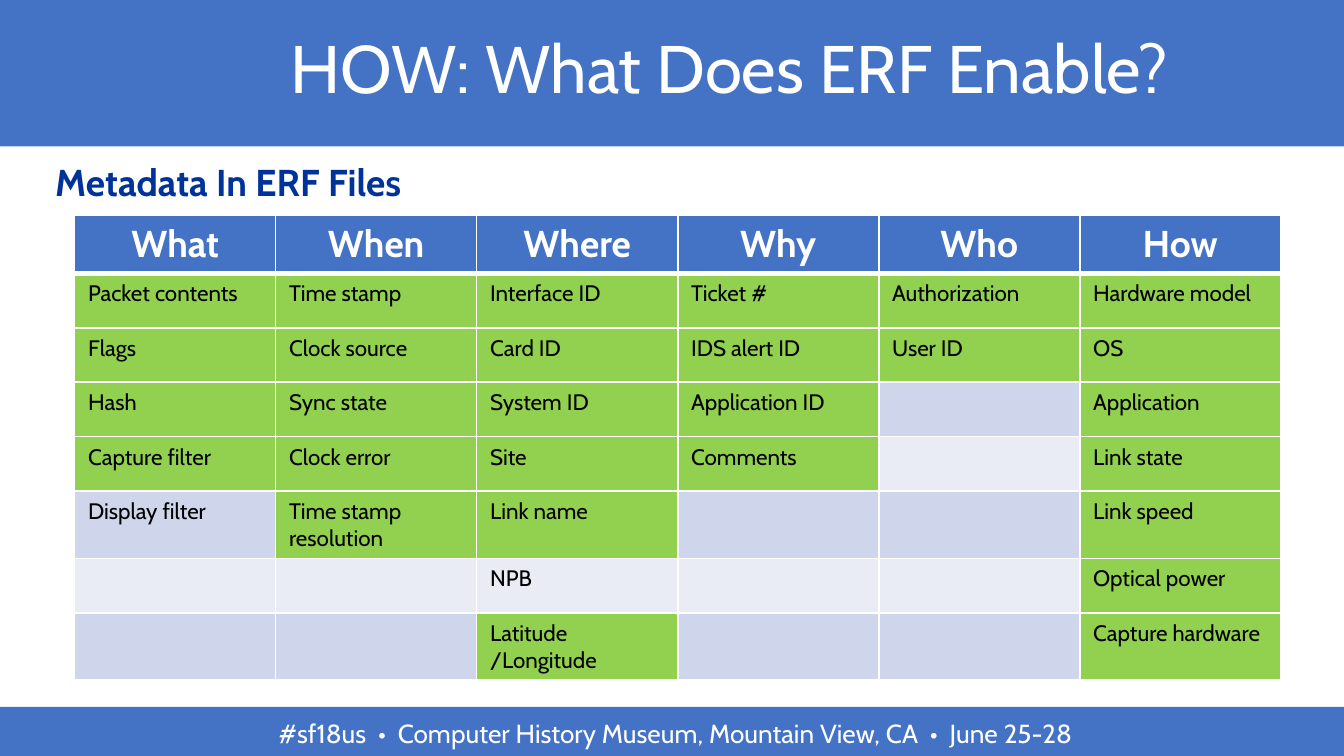
from dataclasses import dataclass

from lxml import etree
from pptx import Presentation
from pptx.dml.color import RGBColor
from pptx.enum.shapes import MSO_SHAPE
from pptx.enum.text import MSO_ANCHOR, PP_ALIGN
from pptx.oxml.ns import qn
from pptx.util import Pt

RECT = MSO_SHAPE.RECTANGLE
LEFT, CENTER = PP_ALIGN.LEFT, PP_ALIGN.CENTER
TOP, MIDDLE = MSO_ANCHOR.TOP, MSO_ANCHOR.MIDDLE


@dataclass(frozen=True)
class Theme:
    font: str = "Cabin"
    blue: str = "4472C4"
    navy: str = "003399"
    green: str = "92D050"
    band_dark: str = "CFD5EA"
    band_light: str = "E9EBF5"
    white: str = "FFFFFF"
    black: str = "000000"
    title: int = 36
    heading: int = 20
    footer: int = 14
    body: int = 12


T = Theme()

HEADERS = ["What", "When", "Where", "Why", "Who", "How"]
COLUMNS = [
    ["Packet contents", "Flags", "Hash", "Capture filter", "Display filter"],
    ["Time stamp", "Clock source", "Sync state", "Clock error",
     "Time stamp resolution"],
    ["Interface ID", "Card ID", "System ID", "Site", "Link name", "NPB",
     "Latitude /Longitude"],
    ["Ticket #", "IDS alert ID", "Application ID", "Comments"],
    ["Authorization", "User ID"],
    ["Hardware model", "OS", "Application", "Link state", "Link speed",
     "Optical power", "Capture hardware"],
]
NOT_ENABLED = {"", "Display filter", "NPB"}  # these keep the band colour
BODY_ROWS = max(len(column) for column in COLUMNS)


def write(tf, text, size, color, bold=False, align=LEFT):
    p = tf.paragraphs[0]
    p.alignment = align
    r = p.add_run()
    r.text = text
    r.font.name = T.font
    r.font.size = Pt(size)
    r.font.bold = bold
    r.font.color.rgb = RGBColor.from_string(color)
    return p


def add_band(s, x, y, w, h):
    sp = s.shapes.add_shape(RECT, Pt(x), Pt(y), Pt(w), Pt(h))
    sp.shadow.inherit = False
    sp.fill.solid()
    sp.fill.fore_color.rgb = RGBColor.from_string(T.blue)
    sp.line.fill.background()


def add_text(s, x, y, w, h, *args, **kwargs):
    sp = s.shapes.add_textbox(Pt(x), Pt(y), Pt(w), Pt(h))
    sp.text_frame.word_wrap = True
    write(sp.text_frame, *args, **kwargs)


def place_title(s, x, y, w, h):
    sp = s.shapes.title
    sp.left, sp.top, sp.width, sp.height = Pt(x), Pt(y), Pt(w), Pt(h)
    tf = sp.text_frame
    tf.word_wrap = True
    tf.vertical_anchor = MIDDLE
    tf.margin_left = tf.margin_right = Pt(7.2)
    tf.margin_top = tf.margin_bottom = Pt(7.2)
    p = write(tf, "HOW: What Does ERF Enable?", T.title, T.white, align=CENTER)
    p.line_spacing = 0.9


def add_footer(s, x, y, w, h):
    add_band(s, x, y, w, h)
    add_text(s, x + 36, y + 2, 652, h,
             "#sf18us  •  Computer History Museum, Mountain View, CA  •  June 25-28",
             T.footer, T.white, align=CENTER)


def set_borders(cell, widths):
    tc_pr = cell._tc.get_or_add_tcPr()
    for side, width in widths.items():
        ln = etree.SubElement(tc_pr, qn(f"a:ln{side}"), w=str(Pt(width)))
        fill = etree.SubElement(ln, qn("a:solidFill"))
        etree.SubElement(fill, qn("a:srgbClr"), val=T.white)


def fill_cell(cell, row, text):
    header = row == 0
    set_borders(cell, {"L": 1, "R": 1, "T": 3 if row == 1 else 1,
                       "B": 3 if header else 1})
    if header:
        color = T.blue
    elif text not in NOT_ENABLED:
        color = T.green
    else:
        color = T.band_dark if row % 2 else T.band_light
    cell.fill.solid()
    cell.fill.fore_color.rgb = RGBColor.from_string(color)
    cell.vertical_anchor = TOP
    if header:
        write(cell.text_frame, text, T.heading, T.white, True, CENTER)
    elif text:
        write(cell.text_frame, text, T.body, T.black)


def add_metadata_table(s, x, y, w, h):
    rows = BODY_ROWS + 1
    table = s.shapes.add_table(rows, len(HEADERS),
                               Pt(x), Pt(y), Pt(w), Pt(h)).table
    for row in table.rows:
        row.height = Pt(h / rows)
    for c, (header, column) in enumerate(zip(HEADERS, COLUMNS)):
        table.columns[c].width = Pt(w / len(HEADERS))
        padding = [""] * (BODY_ROWS - len(column))
        for r, text in enumerate([header] + column + padding):
            fill_cell(table.cell(r, c), r, text)


def main():
    prs = Presentation()
    prs.slide_width, prs.slide_height = Pt(720), Pt(405)
    s = prs.slides.add_slide(prs.slide_layouts[5])

    # Title band, moved behind the title placeholder
    add_band(s, 0, 0, 720, 78.5)
    s.shapes._spTree.append(s.shapes.title._element)
    place_title(s, 61, 0, 659.5, 77)

    # Footer band
    add_footer(s, 0, 378.7, 720, 28)

    # Heading and table
    add_text(s, 22.5, 81.5, 680, 31.5, "Metadata In ERF Files",
             T.heading, T.navy, bold=True)
    add_metadata_table(s, 40, 115.2, 646.2, 233.4)

    prs.save("out.pptx")


if __name__ == "__main__":
    main()
